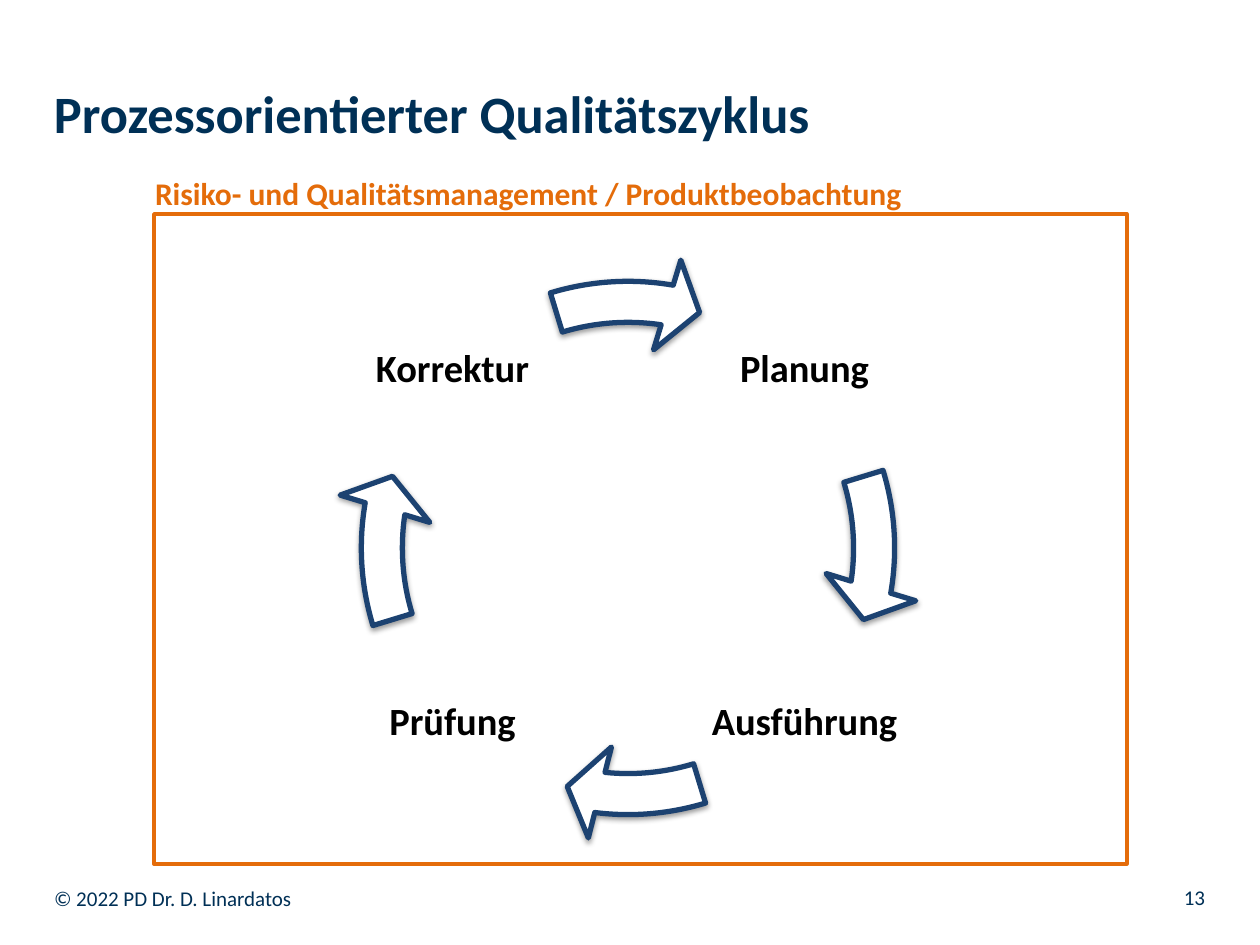
from lxml.etree import SubElement
from pptx import Presentation
from pptx.dml.color import RGBColor
from pptx.enum.shapes import MSO_SHAPE as Shape
from pptx.enum.text import MSO_ANCHOR as Anchor, PP_ALIGN as Align
from pptx.oxml.ns import qn
from pptx.util import Pt

PX = 914400 / 126
COLORS = {"navy": "003056", "orange": "E46C0A", "blue": "1C4271",
          "black": "000000", "white": "FFFFFF"}


def place(*lengths):
    """Turn px lengths into EMU."""
    return [round(length * PX) for length in lengths]


def add_text(text, bounds, size, color, bold=False, align=Align.LEFT,
             anchor=Anchor.TOP, inset=0):
    box = slide.shapes.add_textbox(*place(*bounds))
    frame = box.text_frame
    frame.word_wrap = True
    frame.vertical_anchor = anchor
    frame.margin_left, frame.margin_top, frame.margin_right, frame.margin_bottom = place(*[inset] * 4)
    para = frame.paragraphs[0]
    para.text = text
    para.alignment = align
    para.font.name = "Calibri"
    para.font.size = Pt(size)
    para.font.bold = bold
    para.font.color.rgb = RGBColor.from_string(COLORS[color])
    return para


deck = Presentation()
deck.slide_width, deck.slide_height = place(1260, 945)
slide = deck.slides.add_slide(deck.slide_layouts[6])

add_text("Prozessorientierter Qualitätszyklus", (54, 81, 795, 157), 30, "navy", bold=True)
add_text("13", (1060, 885, 145, 25), 12, "navy", align=Align.RIGHT)
add_text("© 2022 PD Dr. D. Linardatos", (54, 886, 294, 25), 12, "navy")

# Each phase is followed by the arrow leading out of it: (label, left, top, width, head angle)
phases = [
    ("Planung", 701, 267, 207, 5.5),
    ("Ausführung", 701, 620, 207, 57.93),
    ("Prüfung", 338, 620, 229, 113.5),
    ("Korrektur", 349, 267, 207, 167.5),
]
QUARTER_TURN, FULL_TURN = 54, 216
for index, (label, left, top, width, head_angle) in enumerate(phases):
    para = add_text(label, (left, top, width, 207), 22, "black", bold=True,
                    align=Align.CENTER, anchor=Anchor.MIDDLE, inset=4)
    para.line_spacing = 0.9

    arrow = slide.shapes.add_shape(Shape.CIRCULAR_ARROW, *place(335, 255, 586, 586))
    tail_angle = (205.85 + index * QUARTER_TURN) % FULL_TURN
    for slot, value in enumerate((0.07, 4.65, head_angle, tail_angle, 0.08)):
        arrow.adjustments[slot] = value
    arrow.fill.solid()
    arrow.fill.fore_color.rgb = RGBColor.from_string(COLORS["white"])
    arrow.line.color.rgb = RGBColor.from_string(COLORS["blue"])
    arrow.line.width = Pt(3)
    arrow.shadow.inherit = False
    effects = arrow.element.spPr.find(qn("a:effectLst"))
    shadow = SubElement(effects, qn("a:outerShdw"), blurRad="40000", dist="20000",
                        dir="5400000", rotWithShape="0")
    shade = SubElement(shadow, qn("a:srgbClr"), val=COLORS["black"])
    SubElement(shade, qn("a:alpha"), val="38000")

border = slide.shapes.add_shape(Shape.RECTANGLE, *place(154, 214, 973, 650))
border.fill.background()
border.line.color.rgb = RGBColor.from_string(COLORS["orange"])
border.line.width = Pt(2)
border.shadow.inherit = False

add_text("Risiko- und Qualitätsmanagement / Produktbeobachtung", (155, 174, 772, 44),
         18, "orange", bold=True)

deck.save("out.pptx")
